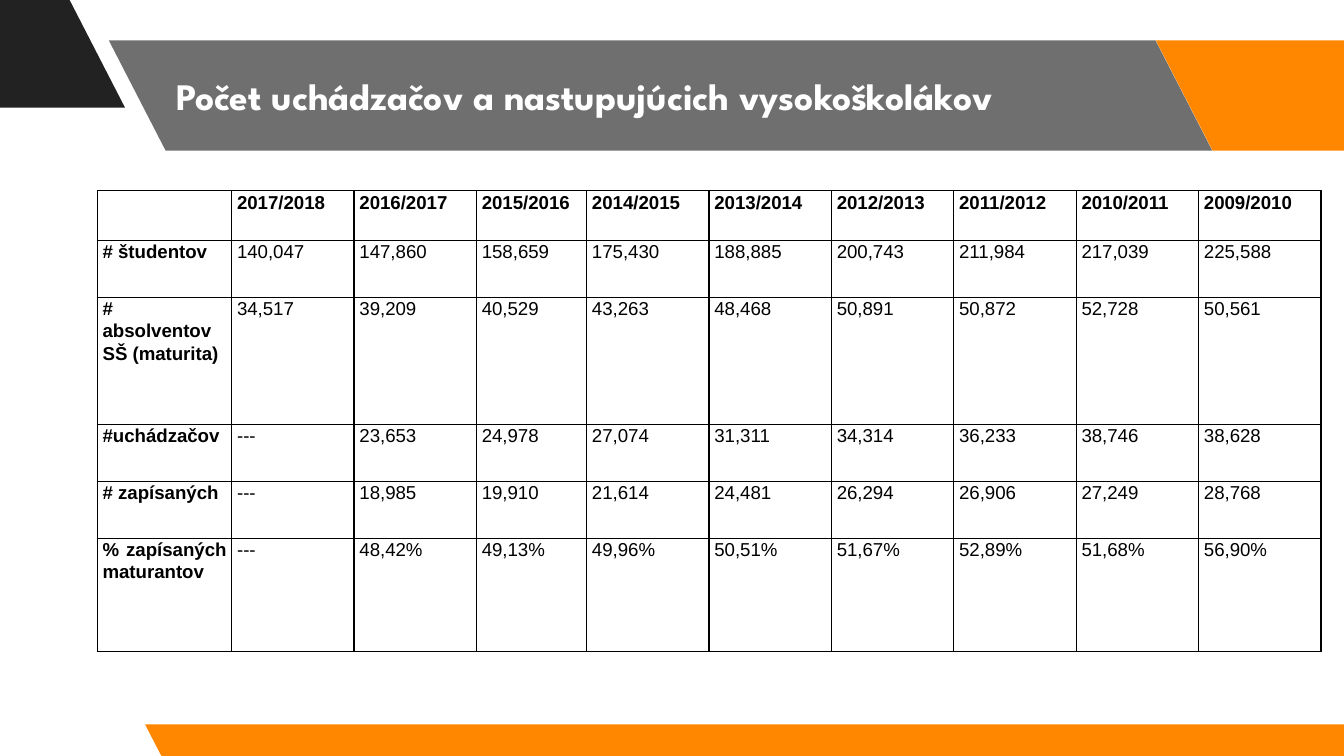
"""Builds the slide on university applicants and entrants by school year."""
from typing import NamedTuple

from lxml import etree
from pptx import Presentation
from pptx import util as u
from pptx.dml.color import RGBColor
from pptx.enum import shapes, text
from pptx.oxml.ns import qn

DARK = RGBColor(0x22, 0x22, 0x22)
ORANGE = RGBColor(0xFF, 0x87, 0x00)
WHITE = RGBColor(0xFF, 0xFF, 0xFF)
BLACK = RGBColor(0x00, 0x00, 0x00)

SLIDE_WIDTH = u.Inches(10)
SLIDE_HEIGHT = SLIDE_WIDTH * 9 // 16
COLUMN = SLIDE_WIDTH / 100
ROW = SLIDE_HEIGHT / 56.25
BAND_SLANT = 0.515


class Area(NamedTuple):
    left: float
    top: float
    width: float
    height: float

    def lengths(self) -> tuple[int, int, int, int]:
        return (round(self.left * COLUMN), round(self.top * ROW),
                round(self.width * COLUMN), round(self.height * ROW))


class Band(NamedTuple):
    area: Area
    color: RGBColor
    opacity: int = 100


class Measure(NamedTuple):
    label: str
    values: str
    height: float


BANDS = [
    Band(Area(-9.9, -0.2, 19.2, 8.2), DARK),
    Band(Area(8.1, 3, 82.1, 8.2), DARK, 65),
    Band(Area(86, 3, 19.2, 8.2), ORANGE),
    Band(Area(10.8, 53.9, 91.5, 2.5), ORANGE),
]
TITLE = "Počet uchádzačov a nastupujúcich vysokoškolákov"
TITLE_AREA = Area(12.1, 3, 73.5, 8.2)
TABLE_AREA = Area(7.24, 14.2, 91.08, 34.3)
COLUMN_WIDTHS = [10, 9.11, 9.11, 8.2] + [9.11] * 6
YEARS = " ".join(f"{year}/{year + 1}" for year in range(2017, 2008, -1))
MEASURES = [
    Measure("", YEARS, 3.7),
    Measure("# študentov", "140,047 147,860 158,659 175,430 188,885 200,743 211,984 217,039 225,588", 4.24),
    Measure("# absolventov SŠ (maturita)", "34,517 39,209 40,529 43,263 48,468 50,891 50,872 52,728 50,561", 9.45),
    Measure("#uchádzačov", "--- 23,653 24,978 27,074 31,311 34,314 36,233 38,746 38,628", 4.24),
    Measure("# zapísaných", "--- 18,985 19,910 21,614 24,481 26,294 26,906 27,249 28,768", 4.24),
    Measure("% zapísaných maturantov", "--- 48,42% 49,13% 49,96% 50,51% 51,67% 52,89% 51,68% 56,90%", 8.43),
]


def draw_band(page, band: Band) -> None:
    shape = page.shapes.add_shape(shapes.MSO_SHAPE.PARALLELOGRAM, *band.area.lengths())
    shape.adjustments[0] = BAND_SLANT
    shape.element.spPr.find(qn("a:xfrm")).set("flipH", "1")
    shape.shadow.inherit = False
    shape.line.fill.background()
    shape.fill.solid()
    shape.fill.fore_color.rgb = band.color
    if band.opacity < 100:
        color = shape.element.spPr.find(f"{qn('a:solidFill')}/{qn('a:srgbClr')}")
        etree.SubElement(color, qn("a:alpha"), val=str(band.opacity * 1000))


def add_span(para, words: str, font: str, size: float, color: RGBColor, bold: bool) -> None:
    span = para.add_run()
    span.text = words
    span.font.name = font
    span.font.size = u.Pt(size)
    span.font.bold = bold
    span.font.color.rgb = color


def draw_title(page) -> None:
    title = page.shapes.title
    title.left, title.top, title.width, title.height = TITLE_AREA.lengths()
    page.shapes.element.append(title.element)
    box = title.text_frame
    box.word_wrap = True
    box.auto_size = text.MSO_AUTO_SIZE.NONE
    box.vertical_anchor = text.MSO_ANCHOR.MIDDLE
    box.margin_left = box.margin_right = box.margin_top = box.margin_bottom = u.Inches(0.1)
    para = box.paragraphs[0]
    para.alignment = text.PP_ALIGN.LEFT
    add_span(para, TITLE, "League Spartan", 20, WHITE, True)


def add_borders(cell) -> None:
    properties = cell._tc.get_or_add_tcPr()
    for side in ("lnL", "lnR", "lnT", "lnB"):
        line = etree.SubElement(properties, qn(f"a:{side}"), w=str(u.Pt(0.75)))
        fill = etree.SubElement(line, qn("a:solidFill"))
        etree.SubElement(fill, qn("a:srgbClr"), val=str(BLACK))


def fill_cell(cell, words: str, bold: bool) -> None:
    add_borders(cell)
    cell.fill.background()
    cell.margin_left = cell.margin_right = u.Inches(0.04)
    cell.margin_top = cell.margin_bottom = 0
    para = cell.text_frame.paragraphs[0]
    para.alignment = text.PP_ALIGN.JUSTIFY
    para.line_spacing = 1.07
    para.space_after = u.Pt(8)
    add_span(para, words, "Arial", 10, BLACK, bold)


def draw_table(page) -> None:
    table = page.shapes.add_table(len(MEASURES), len(COLUMN_WIDTHS), *TABLE_AREA.lengths()).table
    table.first_row = table.horz_banding = False
    for column, width in zip(table.columns, COLUMN_WIDTHS):
        column.width = round(width * COLUMN)
    for row_index, measure in enumerate(MEASURES):
        table.rows[row_index].height = round(measure.height * ROW)
        for column_index, words in enumerate([measure.label, *measure.values.split()]):
            heading = row_index == 0 or column_index == 0
            fill_cell(table.cell(row_index, column_index), words, heading)


def main() -> None:
    deck = Presentation()
    deck.slide_width = SLIDE_WIDTH
    deck.slide_height = SLIDE_HEIGHT
    page = deck.slides.add_slide(deck.slide_layouts.get_by_name("Title Only"))
    for band in BANDS:
        draw_band(page, band)
    draw_title(page)
    draw_table(page)
    deck.save("out.pptx")


if __name__ == "__main__":
    main()
